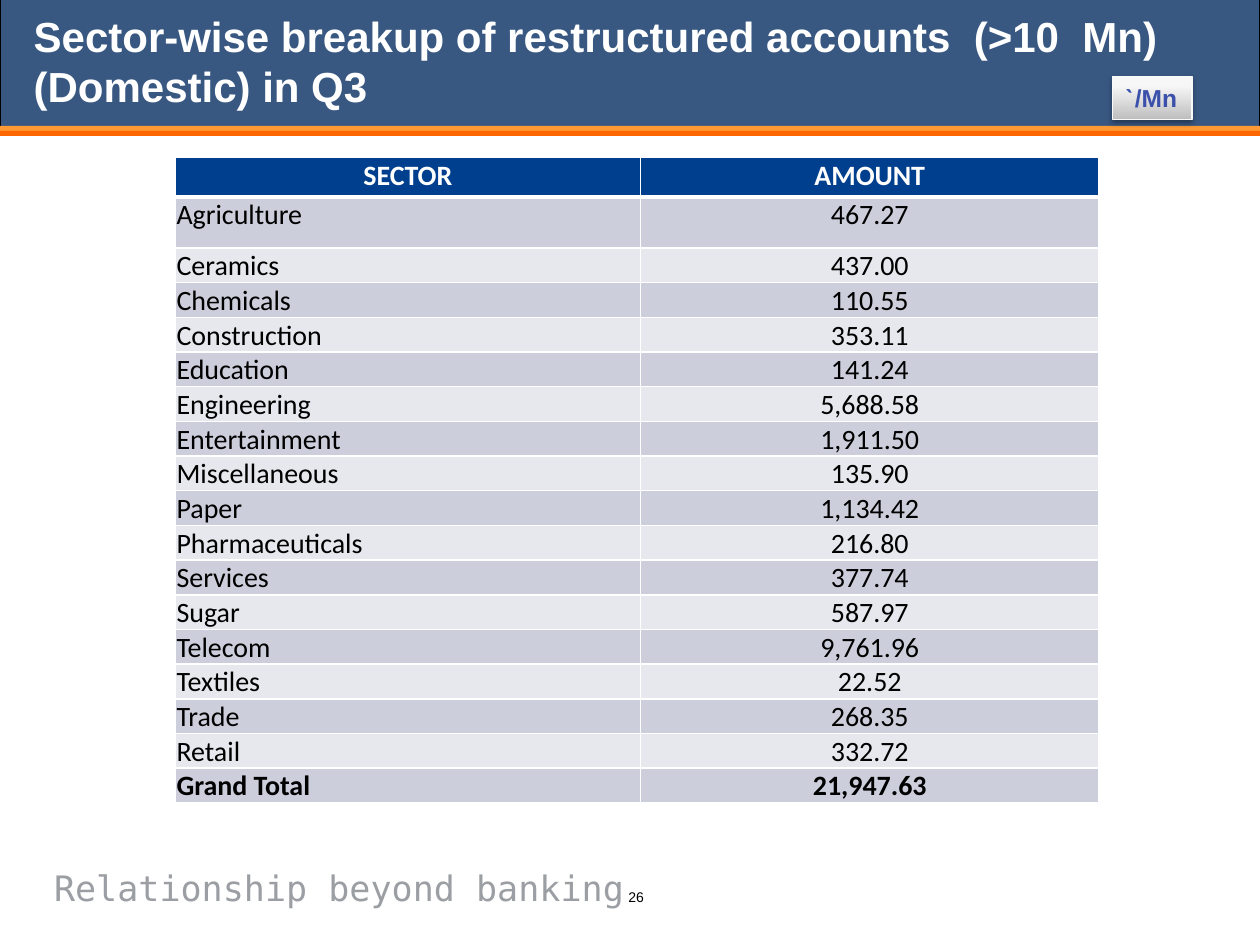
import pptx
import pptx.dml.color
import pptx.enum.dml
import pptx.enum.shapes
import pptx.enum.text
import pptx.oxml
import pptx.oxml.ns
import pptx.util
from dataclasses import dataclass
from typing import Optional

Cm = pptx.util.Cm
Pt = pptx.util.Pt
RGBColor = pptx.dml.color.RGBColor
Align = pptx.enum.text.PP_ALIGN
Anchor = pptx.enum.text.MSO_ANCHOR
NS = pptx.oxml.ns.nsdecls("a")

WHITE = RGBColor(0xFF, 0xFF, 0xFF)
BLACK = RGBColor(0, 0, 0)
NAVY = RGBColor(0x00, 0x2A, 0x60)
BLUE = RGBColor(0x00, 0x3F, 0x8E)
INDIGO = RGBColor(0x3A, 0x50, 0xAB)
AMBER = RGBColor(0xFF, 0x99, 0x33)
ORANGE = RGBColor(0xFF, 0x66, 0x00)
DARK = RGBColor(0xCC, 0xCF, 0xDB)
LIGHT = RGBColor(0xE7, 0xE8, 0xEE)
GREY = RGBColor(0x9B, 0x9E, 0xA3)
STEEL = RGBColor(0xBE, 0xBE, 0xBE)
PEARL = RGBColor(0xF7, 0xF7, 0xF7)
EDGE = RGBColor(0xF9, 0xF9, 0xF9)


@dataclass
class Box:
    left: float
    top: float
    width: float
    height: float

    def place(self) -> tuple:
        return Cm(self.left), Cm(self.top), Cm(self.width), Cm(self.height)


@dataclass
class Band:
    box: Box
    fill: RGBColor
    line: Optional[RGBColor] = None
    alpha: int = 100


@dataclass
class Run:
    text: str
    size: float
    font: str
    color: RGBColor
    bold: bool = False


@dataclass
class Label:
    box: Box
    run: Run
    wrap: bool = True
    anchor: Anchor = Anchor.TOP


BANDS = [
    Band(Box(0, -0.03, 25.4, 2.72), NAVY, BLACK, 78),
    Band(Box(-0.03, 2.54, 25.43, 0.1), AMBER),
    Band(Box(-0.03, 2.64, 25.43, 0.1), ORANGE),
]
LABELS = [
    Label(Box(0.84, 17.35, 13.79, 1.09),
          Run("Relationship beyond banking", 20, "DejaVu Sans Mono", GREY),
          anchor=Anchor.MIDDLE),
    Label(Box(0.43, 0.08, 24.13, 2.31),
          Run("Sector-wise breakup of restructured accounts  (>10  Mn) "
              "(Domestic) in Q3", 24, "Arial", WHITE, True)),
    Label(Box(12.42, 17.78, 0.84, 0.61), Run("26", 8, "Arial", BLACK), False),
]
UNIT = [Run("`", 14, "Lato", INDIGO, True), Run("/Mn", 14, "Arial", INDIGO, True)]
ROWS = [
    ("SECTOR", "AMOUNT"),
    ("Agriculture", "467.27"),
    ("Ceramics", "437.00"),
    ("Chemicals", "110.55"),
    ("Construction", "353.11"),
    ("Education", "141.24"),
    ("Engineering", "5,688.58"),
    ("Entertainment", "1,911.50"),
    ("Miscellaneous", "135.90"),
    ("Paper", "1,134.42"),
    ("Pharmaceuticals", "216.80"),
    ("Services", "377.74"),
    ("Sugar", "587.97"),
    ("Telecom", "9,761.96"),
    ("Textiles", "22.52"),
    ("Trade", "268.35"),
    ("Retail", "332.72"),
    ("Grand Total", "21,947.63"),
]
COLS = [9.37, 9.25]
HIGH = {0: 0.79, 1: 1.03}
ROW = 0.7


def add_run(para, run: Run) -> None:
    part = para.add_run()
    part.text = run.text
    part.font.size = Pt(run.size)
    part.font.name = run.font
    part.font.bold = run.bold
    part.font.color.rgb = run.color


def add_rect(slide, box: Box):
    shape = slide.shapes.add_shape(
        pptx.enum.shapes.MSO_SHAPE.RECTANGLE, *box.place())
    shape.shadow.inherit = False
    return shape


def draw_band(slide, band: Band) -> None:
    shape = add_rect(slide, band.box)
    shape.fill.solid()
    shape.fill.fore_color.rgb = band.fill
    if band.alpha < 100:
        tint = shape.element.spPr.find(".//" + pptx.oxml.ns.qn("a:srgbClr"))
        tint.append(pptx.oxml.parse_xml(
            f'<a:alpha {NS} val="{band.alpha * 1000}"/>'))
    if band.line is None:
        shape.line.fill.background()
    else:
        shape.line.color.rgb = band.line
        shape.line.width = Pt(0.75)


def draw_label(slide, label: Label) -> None:
    frame = slide.shapes.add_textbox(*label.box.place()).text_frame
    frame.word_wrap = label.wrap
    frame.vertical_anchor = label.anchor
    add_run(frame.paragraphs[0], label.run)


def draw_unit(slide) -> None:
    shape = add_rect(slide, Box(22.43, 1.55, 1.6, 0.86))
    shape.fill.gradient()
    shape.fill.gradient_angle = 90
    for stop, (pos, color) in zip(shape.fill.gradient_stops,
                                  [(0, STEEL), (0.8, PEARL)]):
        stop.position = pos
        stop.color.rgb = color
    shape.line.color.rgb = EDGE
    shape.line.width = Pt(0.75)
    # Soft shadow below the button
    shape.element.spPr.find(pptx.oxml.ns.qn("a:effectLst")).append(
        pptx.oxml.parse_xml(
            f'<a:outerShdw {NS} blurRad="{Pt(3.1)}" dist="{Pt(1.8)}" '
            'dir="5400000" rotWithShape="0"><a:srgbClr val="000000">'
            '<a:alpha val="35000"/></a:srgbClr></a:outerShdw>'))
    frame = shape.text_frame
    frame.word_wrap = False
    frame.vertical_anchor = Anchor.TOP
    para = frame.paragraphs[0]
    para.alignment = Align.LEFT
    for run in UNIT:
        add_run(para, run)


def add_edges(cell, head: bool, below: bool) -> None:
    wide = {"T": 3 if below else 1, "B": 3 if head else 1}
    props = cell._tc.get_or_add_tcPr()
    for side in "LRTB":
        props.append(pptx.oxml.parse_xml(
            f'<a:ln{side} {NS} w="{Pt(wide.get(side, 1))}"><a:solidFill>'
            f'<a:srgbClr val="{WHITE}"/></a:solidFill></a:ln{side}>'))


def draw_table(slide) -> None:
    highs = [HIGH.get(i, ROW) for i in range(len(ROWS))]
    box = Box(3.54, 3.18, sum(COLS), sum(highs))
    table = slide.shapes.add_table(len(ROWS), len(COLS), *box.place()).table
    for col, width in zip(table.columns, COLS):
        col.width = Cm(width)
    for i, texts in enumerate(ROWS):
        table.rows[i].height = Cm(highs[i])
        head = i == 0
        bold = head or i == len(ROWS) - 1
        for j, text in enumerate(texts):
            cell = table.cell(i, j)
            add_edges(cell, head, i == 1)
            cell.fill.solid()
            cell.fill.fore_color.rgb = BLUE if head else DARK if i % 2 else LIGHT
            cell.margin_left = cell.margin_right = cell.margin_top = Cm(0.02)
            cell.margin_bottom = Cm(0)
            para = cell.text_frame.paragraphs[0]
            para.alignment = Align.CENTER if head or j else Align.LEFT
            add_run(para, Run(text, 16, "Calibri", WHITE if head else BLACK, bold))


def main() -> None:
    deck = pptx.Presentation()
    deck.slide_width, deck.slide_height = Cm(25.4), Cm(19.05)
    slide = deck.slides.add_slide(deck.slide_layouts[6])
    # Header bands
    for band in BANDS:
        draw_band(slide, band)
    # Title, slogan and page number
    for label in LABELS:
        draw_label(slide, label)
    # Unit button and figures
    draw_unit(slide)
    draw_table(slide)
    deck.save("out.pptx")


if __name__ == "__main__":
    main()
